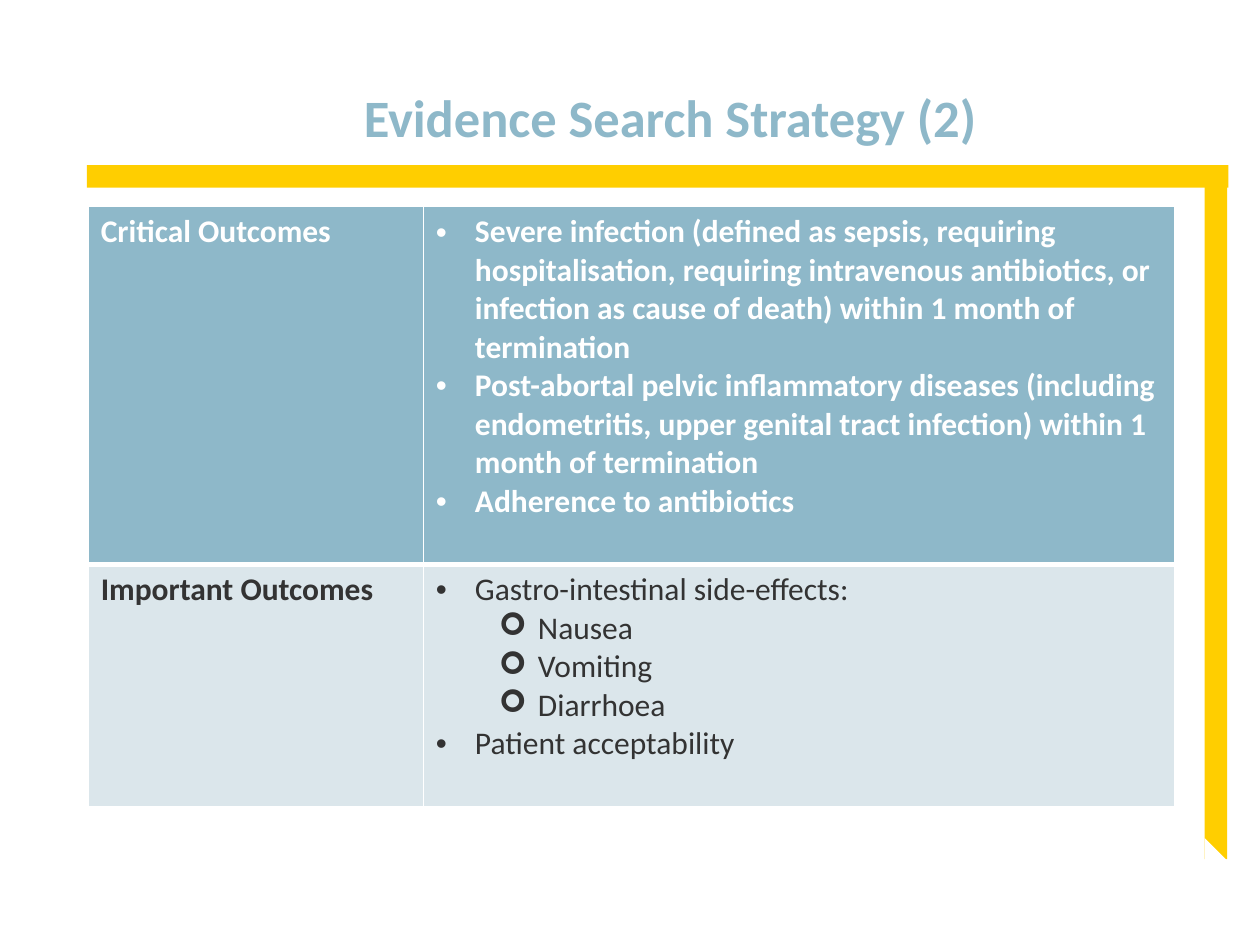
from lxml import etree
from pptx import Presentation
from pptx.dml.color import RGBColor
from pptx.enum.shapes import MSO_SHAPE
from pptx.enum.text import MSO_ANCHOR
from pptx.oxml.ns import qn
from pptx.util import Inches, Pt

RECTANGLE = MSO_SHAPE.RECTANGLE
TRIANGLE = MSO_SHAPE.ISOSCELES_TRIANGLE
BOTTOM = MSO_ANCHOR.BOTTOM

BLUE = RGBColor(0x8E, 0xB8, 0xC9)
PALE = RGBColor(0xDB, 0xE6, 0xEB)
YELLOW = RGBColor(0xFF, 0xCE, 0x00)
WHITE = RGBColor(0xFF, 0xFF, 0xFF)
DARK = RGBColor(0x33, 0x33, 0x33)
FONT = "Calibri"

TITLE = "Evidence Search Strategy (2)"
OUTCOMES = [
    {"label": "Critical Outcomes", "fill": BLUE, "color": WHITE, "bold": True,
     "height": 2.84, "top_line": 1, "bottom_line": 3,
     "items": [
         (0, "Severe infection (defined as sepsis, requiring hospitalisation, "
             "requiring intravenous antibiotics, or infection as cause of death) "
             "within 1 month of termination"),
         (0, "Post-abortal pelvic inflammatory diseases (including endometritis, "
             "upper genital tract infection) within 1 month of termination"),
         (0, "Adherence to antibiotics")]},
    {"label": "Important Outcomes", "fill": PALE, "color": DARK, "bold": False,
     "height": 1.92, "top_line": 3, "bottom_line": 1,
     "items": [
         (0, "Gastro-intestinal side-effects:"),
         (1, "Nausea"),
         (1, "Vomiting"),
         (1, "Diarrhoea"),
         (0, "Patient acceptability")]},
]
BULLETS = [("•", "Arial", 0.31), ("➢", "Wingdings", 0.81)]
HANGING = 0.31
COLUMNS = [2.66, 5.96]
TABLE_LEFT, TABLE_TOP = 0.7, 1.64
FRAME = [
    (RECTANGLE, YELLOW, (0.69, 1.31, 9.06, 0.18)),
    (RECTANGLE, YELLOW, (9.56, 1.31, 0.18, 5.51)),
    (TRIANGLE, WHITE, (9.56, 6.65, 0.18, 0.18)),
]


def style(paragraph, size, color, bold):
    for run in paragraph.runs:
        run.font.name = FONT
        run.font.size = Pt(size)
        run.font.color.rgb = color
        run.font.bold = bold


def indent(paragraph, left, first=0):
    properties = paragraph._p.get_or_add_pPr()
    properties.set("marL", str(Inches(left)))
    properties.set("indent", str(Inches(first)))
    return properties


def add_bullet(paragraph, level):
    mark, mark_font, left = BULLETS[level]
    paragraph.level = level
    properties = indent(paragraph, left, -HANGING)
    etree.SubElement(properties, qn("a:buFont")).set("typeface", mark_font)
    etree.SubElement(properties, qn("a:buChar")).set("char", mark)


def format_cell(cell, outcome):
    properties = cell._tc.get_or_add_tcPr()
    borders = {"L": 1, "R": 1, "T": outcome["top_line"], "B": outcome["bottom_line"]}
    for side, width in borders.items():
        line = etree.SubElement(properties, qn(f"a:ln{side}"), w=str(Pt(width)))
        fill = etree.SubElement(line, qn("a:solidFill"))
        etree.SubElement(fill, qn("a:srgbClr"), val=str(WHITE))
    cell.fill.solid()
    cell.fill.fore_color.rgb = outcome["fill"]


def add_frame(slide):
    for preset, color, box in FRAME:
        bar = slide.shapes.add_shape(preset, *map(Inches, box))
        bar.shadow.inherit = False
        bar.fill.solid()
        bar.fill.fore_color.rgb = color
        bar.line.fill.background()
        if preset == TRIANGLE:
            bar.adjustments[0] = 0


def add_title(slide):
    title = slide.shapes.add_textbox(*map(Inches, (2.53, 0.19, 7.17, 1.04))).text_frame
    title.word_wrap = True
    title.vertical_anchor = BOTTOM
    title.text = TITLE
    heading = title.paragraphs[0]
    heading.line_spacing = 0.9
    indent(heading, 0.26)
    style(heading, 30, BLUE, True)


def add_outcomes(slide):
    height = sum(outcome["height"] for outcome in OUTCOMES)
    table = slide.shapes.add_table(
        len(OUTCOMES), len(COLUMNS), Inches(TABLE_LEFT), Inches(TABLE_TOP),
        Inches(sum(COLUMNS)), Inches(height)).table
    for column, width in zip(table.columns, COLUMNS):
        column.width = Inches(width)
    for row, outcome in zip(table.rows, OUTCOMES):
        row.height = Inches(outcome["height"])
        label, details = row.cells
        for cell in (label, details):
            format_cell(cell, outcome)
        label.text_frame.text = outcome["label"]
        style(label.text_frame.paragraphs[0], 18, outcome["color"], True)
        items = outcome["items"]
        details.text_frame.text = "\n".join(text for _, text in items)
        for paragraph, (level, _) in zip(details.text_frame.paragraphs, items):
            add_bullet(paragraph, level)
            style(paragraph, 18, outcome["color"], outcome["bold"])


def main():
    deck = Presentation()
    deck.slide_width, deck.slide_height = Inches(10), Inches(7.5)
    slide = deck.slides.add_slide(deck.slide_layouts[6])
    add_frame(slide)
    add_title(slide)
    add_outcomes(slide)
    deck.save("out.pptx")


if __name__ == "__main__":
    main()
